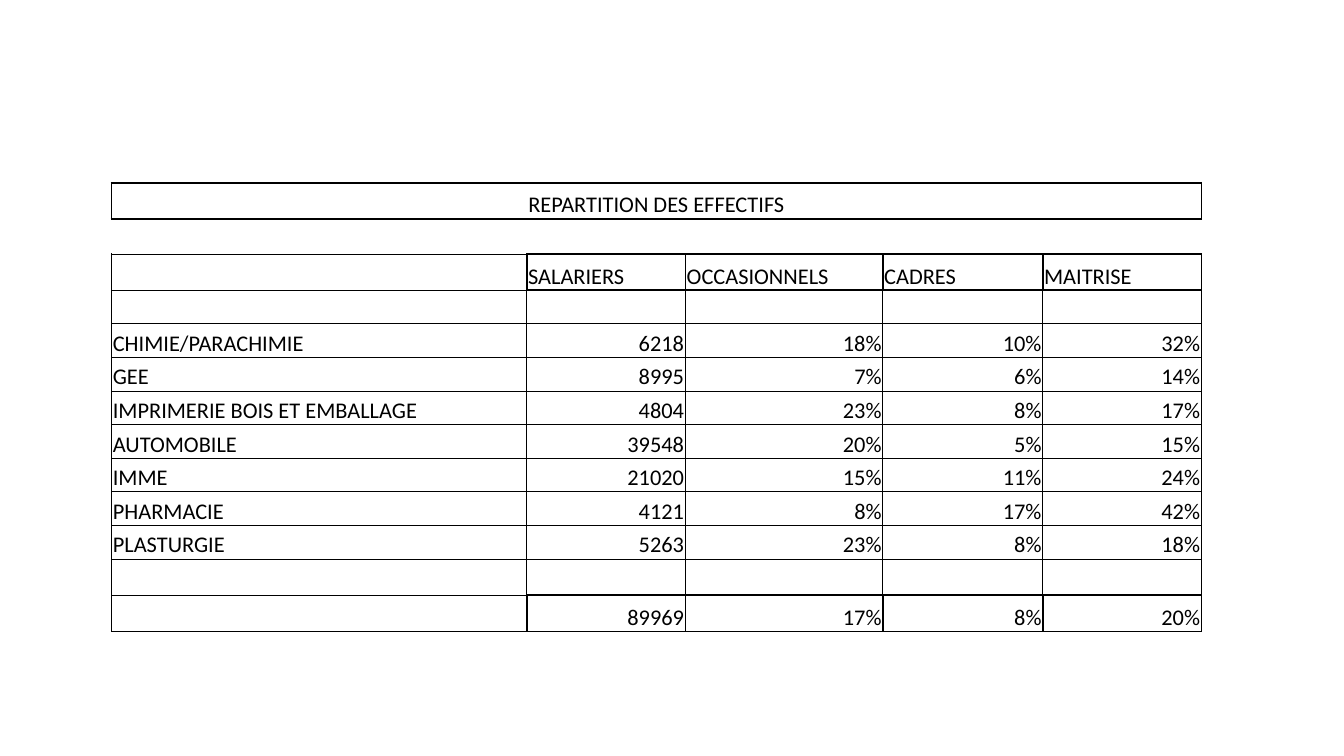
from typing import NamedTuple

from lxml.etree import SubElement as Sub
from pptx import Presentation
from pptx.dml.color import RGBColor
from pptx.enum.text import MSO_ANCHOR as Anchor, PP_ALIGN as Align
from pptx.oxml.ns import qn
from pptx.util import Inches, Pt

BLACK = RGBColor(0, 0, 0)
FACE, SIZE = "Calibri", 12
THIN, THICK = 0.5, 1
TITLE, GAP, HEAD, TOTAL = 0, 1, 2, 12
WIDTHS = (3.09, 1.18, 1.47, 1.19, 1.18)
HEIGHTS = (0.27, 0.26, 0.27) + (0.25,) * 8 + (0.27,) * 2
SIDES = {"L": (0, -1), "R": (0, 1), "T": (-1, 0), "B": (1, 0)}
CELL = {
    "margin_left": Inches(0.01),
    "margin_right": Inches(0.01),
    "margin_top": Inches(0.01),
    "margin_bottom": 0,
    "vertical_anchor": Anchor.BOTTOM,
}
FONT = {"name": FACE, "size": Pt(SIZE)}
PLAIN = {"first_row": False, "horz_banding": False}


class Line(NamedTuple):
    label: str = ""
    staff: str = ""
    temps: str = ""
    execs: str = ""
    leads: str = ""


LINES = (
    Line("REPARTITION DES EFFECTIFS"),
    Line(),
    Line("", "SALARIERS", "OCCASIONNELS", "CADRES", "MAITRISE"),
    Line(),
    Line("CHIMIE/PARACHIMIE", "6218", "18%", "10%", "32%"),
    Line("GEE", "8995", "7%", "6%", "14%"),
    Line("IMPRIMERIE BOIS ET EMBALLAGE", "4804", "23%", "8%", "17%"),
    Line("AUTOMOBILE", "39548", "20%", "5%", "15%"),
    Line("IMME", "21020", "15%", "11%", "24%"),
    Line("PHARMACIE", "4121", "8%", "17%", "42%"),
    Line("PLASTURGIE", "5263", "23%", "8%", "18%"),
    Line(),
    Line("", "89969", "17%", "8%", "20%"),
)


def apply(item, values: dict) -> None:
    for name, value in values.items():
        setattr(item, name, value)


def strong(row: int, col: int) -> bool:
    if not 0 <= col < len(WIDTHS):
        return False
    return row == TITLE or (row in (HEAD, TOTAL) and col > 0)


def weight(row: int, col: int, side: str) -> float:
    if row == GAP and side in "LR":
        return 0
    down, over = SIDES[side]
    bold = strong(row, col) or strong(row + down, col + over)
    return THICK if bold else THIN


def border(cell, side: str, points: float) -> None:
    props = cell._tc.get_or_add_tcPr()
    edge = Sub(props, qn(f"a:ln{side}"), w=str(Pt(points)))
    if points:
        fill = Sub(edge, qn("a:solidFill"))
        Sub(fill, qn("a:srgbClr"), val=str(BLACK))
    else:
        Sub(edge, qn("a:noFill"))


def align(row: int, col: int) -> Align:
    if row == TITLE:
        return Align.CENTER
    return Align.RIGHT if row > HEAD and col > 0 else Align.LEFT


def write(cell, text: str, side: Align) -> None:
    para = cell.text_frame.paragraphs[0]
    para.alignment = side
    if text:
        run = para.add_run()
        run.text = text
        apply(run.font, FONT)
        run.font.color.rgb = BLACK
    else:
        end = Sub(para._p, qn("a:endParaRPr"), sz=str(SIZE * 100))
        Sub(end, qn("a:latin"), typeface=FACE)


def draw(slide, lines: tuple[Line, ...]) -> None:
    table = slide.shapes.add_table(
        len(lines), len(WIDTHS), Inches(0.83), Inches(1.36),
        Inches(sum(WIDTHS)), Inches(sum(HEIGHTS)),
    ).table
    apply(table, PLAIN)
    for column, width in zip(table.columns, WIDTHS):
        column.width = Inches(width)
    for band, height in zip(table.rows, HEIGHTS):
        band.height = Inches(height)
    for row, line in enumerate(lines):
        for col, text in enumerate(line):
            cell = table.cell(row, col)
            apply(cell, CELL)
            for side in SIDES:
                border(cell, side, weight(row, col, side))
            cell.fill.background()
            write(cell, text, align(row, col))
    table.cell(TITLE, 0).merge(table.cell(TITLE, len(WIDTHS) - 1))


def main() -> None:
    deck = Presentation()
    deck.slide_width = Inches(10)
    deck.slide_height = Inches(10 * 9 / 16)
    draw(deck.slides.add_slide(deck.slide_layouts[6]), LINES)
    deck.save("out.pptx")


if __name__ == "__main__":
    main()
